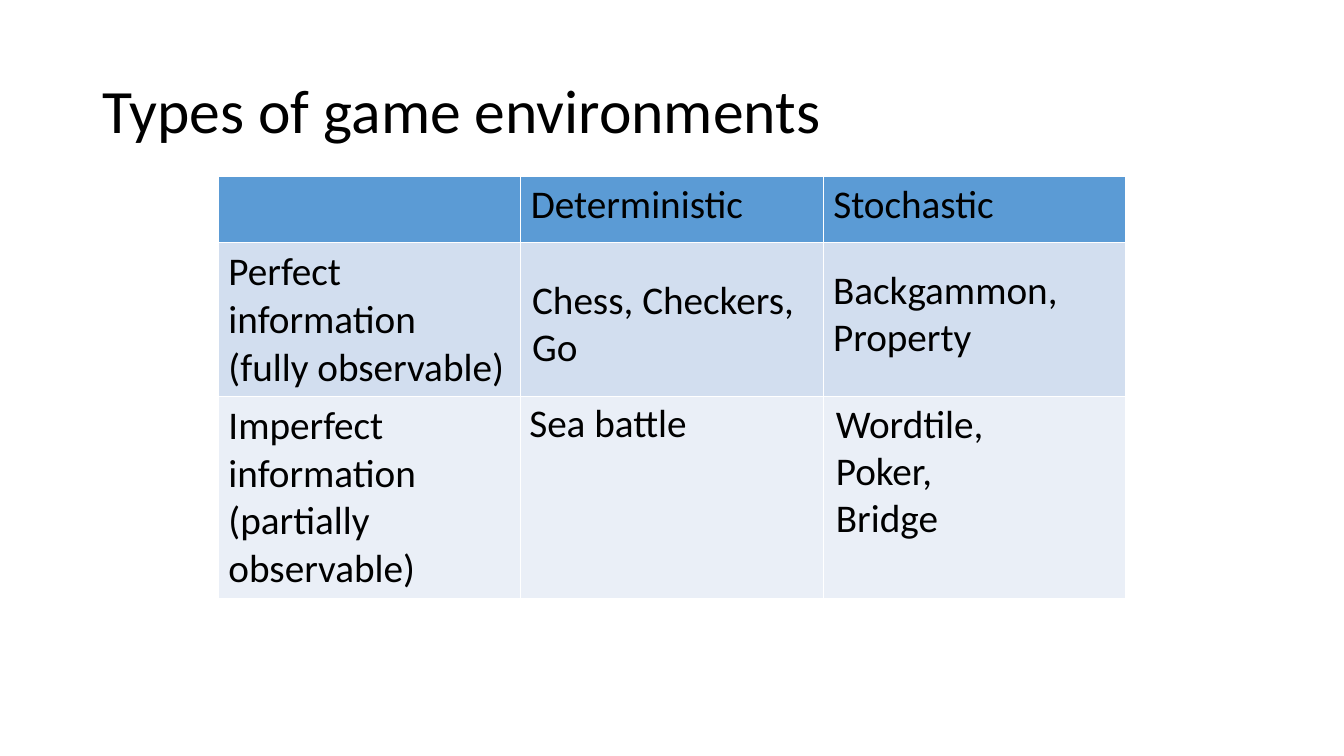
from lxml.etree import SubElement
from pptx import Presentation
from pptx.dml.color import RGBColor
from pptx.enum.text import MSO_ANCHOR, MSO_AUTO_SIZE, PP_ALIGN
from pptx.oxml.ns import qn
from pptx.util import Pt

FONT = "Calibri"
ROWS = [
    ("5B9BD5", 47.5, ["", "Deterministic", "Stochastic"]),
    ("D2DEEF", 110, ["Perfect information\v(fully observable)", "", ""]),
    ("EAEFF7", 144, ["Imperfect information\n(partially observable)", "", ""]),
]
GAMES = [
    ("Chess, Checkers, Go", 373, 193, 215, 75, True),
    ("Backgammon, Property", 588, 186, 203, 75, True),
    ("Sea battle", 371, 281, 130, 41, False),
    ("Wordtile, Poker, Bridge", 590, 281.5, 148, 109, True),
]


def rgb(value):
    return RGBColor.from_string(value)


def style_text(tf, size):
    for p in tf.paragraphs:
        p.alignment = PP_ALIGN.LEFT
        p.font.name = FONT
        p.font.size = Pt(size)
        p.font.bold = False
        p.font.color.rgb = rgb("000000")


def place(sp, x, y, w, h):
    sp.left, sp.top, sp.width, sp.height = Pt(x), Pt(y), Pt(w), Pt(h)


def add_title(s, text):
    sp = s.shapes.title
    place(sp, 66, 28.75, 828, 104.5)
    tf = sp.text_frame
    tf.text = text
    tf.vertical_anchor = MSO_ANCHOR.MIDDLE
    style_text(tf, 44)
    tf.paragraphs[0].line_spacing = 0.9


def set_borders(cell, color, width):
    tcPr = cell._tc.get_or_add_tcPr()
    for i, side in enumerate(("lnL", "lnR", "lnT", "lnB")):
        ln = tcPr.makeelement(qn(f"a:{side}"), {"w": str(Pt(width))})
        fill = SubElement(ln, qn("a:solidFill"))
        SubElement(fill, qn("a:srgbClr"), val=color)
        tcPr.insert(i, ln)


def add_environment_table(s):
    height = sum(h for _, h, _ in ROWS)
    table = s.shapes.add_table(
        len(ROWS), 3, Pt(156), Pt(126), Pt(648), Pt(height)).table
    for row, (fill, h, texts) in zip(table.rows, ROWS):
        row.height = Pt(h)
        for cell, text in zip(row.cells, texts):
            cell.text = text
            cell.fill.solid()
            cell.fill.fore_color.rgb = rgb(fill)
            style_text(cell.text_frame, 28)
            set_borders(cell, "FFFFFF", 1)


def add_games(s, text, x, y, w, h, wrap):
    tf = s.shapes.add_textbox(Pt(x), Pt(y), Pt(w), Pt(h)).text_frame
    tf.word_wrap = wrap
    tf.auto_size = MSO_AUTO_SIZE.SHAPE_TO_FIT_TEXT
    tf.text = text
    style_text(tf, 28)


def main():
    prs = Presentation()
    prs.slide_width, prs.slide_height = Pt(960), Pt(540)
    s = prs.slides.add_slide(prs.slide_layouts[5])
    add_title(s, "Types of game environments")
    add_environment_table(s)
    for games in GAMES:
        add_games(s, *games)
    prs.save("out.pptx")


if __name__ == "__main__":
    main()
